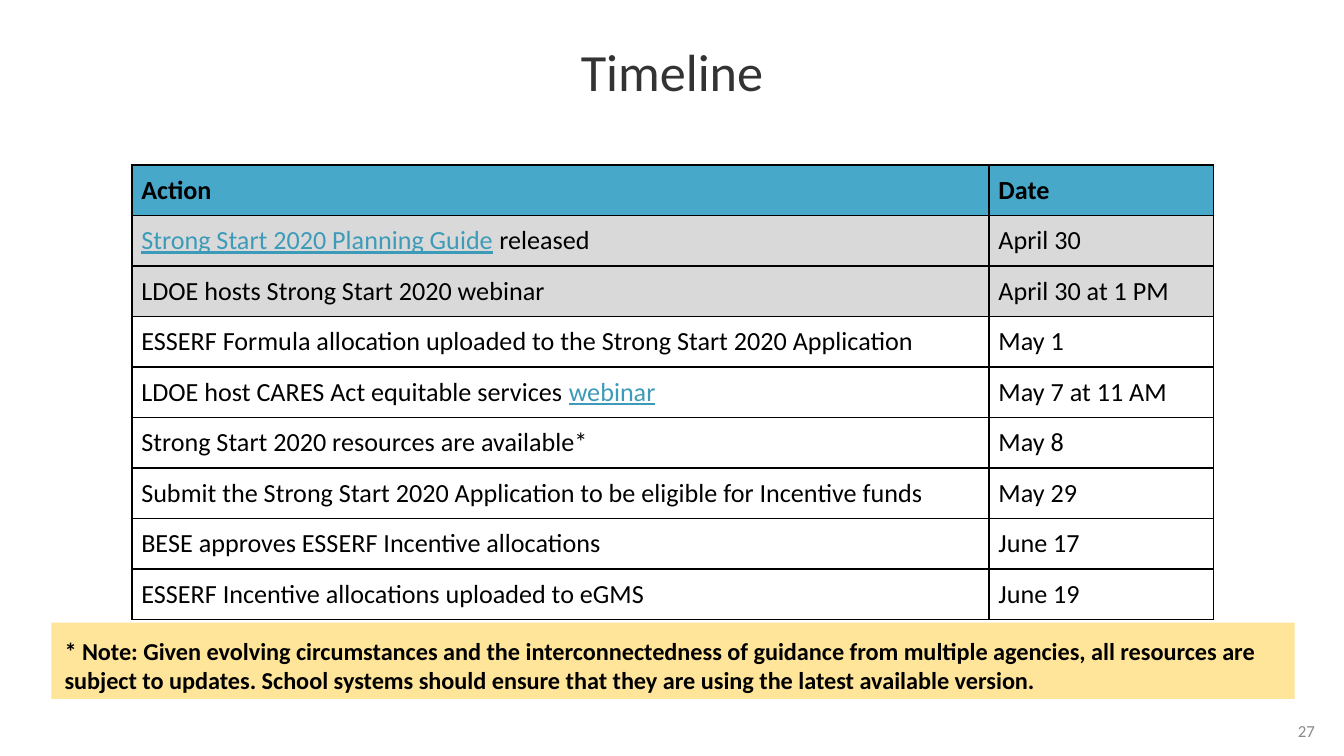
from lxml import etree
from pptx import Presentation
from pptx.dml.color import RGBColor
from pptx.enum.shapes import MSO_SHAPE
from pptx.enum.text import MSO_ANCHOR, PP_ALIGN
from pptx.oxml.ns import qn
from pptx.util import Cm, Pt

RECTANGLE = MSO_SHAPE.RECTANGLE
TOP, MIDDLE = MSO_ANCHOR.TOP, MSO_ANCHOR.MIDDLE
LEFT, CENTER, RIGHT = PP_ALIGN.LEFT, PP_ALIGN.CENTER, PP_ALIGN.RIGHT

COLORS = {
    "title": "333333",
    "text": "000000",
    "link": "3D9BBA",
    "number": "8A8A8A",
    "header": "47A8CA",
    "done": "D9D9D9",
    "note": "FFE599",
    "border": "000000",
}
FONT = "Calibri"
TITLE_ONLY = 5
COLUMN_WIDTHS = (16.2, 4.24)
ROW_HEIGHT = 0.95
DONE_ROWS = 2
BORDER_SIDES = ("a:lnL", "a:lnR", "a:lnT", "a:lnB")

# Each action is a list of (text, is_link) spans.
TIMELINE = [
    ([("Strong Start 2020 Planning Guide", True), (" released", False)], "April 30"),
    ([("LDOE hosts Strong Start 2020 webinar", False)], "April 30 at 1 PM"),
    ([("ESSERF Formula allocation uploaded to the Strong Start 2020 Application", False)], "May 1"),
    ([("LDOE host CARES Act equitable services ", False), ("webinar", True)], "May 7 at 11 AM"),
    ([("Strong Start 2020 resources are available*", False)], "May 8"),
    ([("Submit the Strong Start 2020 Application to be eligible for Incentive funds", False)], "May 29"),
    ([("BESE approves ESSERF Incentive allocations", False)], "June 17"),
    ([("ESSERF Incentive allocations uploaded to eGMS", False)], "June 19"),
]
NOTE = (
    "* Note: Given evolving circumstances and the interconnectedness of guidance "
    "from multiple agencies, all resources are subject to updates. School systems "
    "should ensure that they are using the latest available version."
)


def set_attributes(target, values):
    for name, value in values.items():
        setattr(target, name, value)


def set_margins(target, margin):
    for side in ("left", "right", "top", "bottom"):
        setattr(target, f"margin_{side}", Cm(margin))


def add_span(para, text, color, **font_values):
    span = para.add_run()
    span.text = text
    set_attributes(span.font, {"name": FONT, **font_values})
    span.font.color.rgb = RGBColor.from_string(COLORS[color])


def write_text(shape, text, color, align, anchor, **font_values):
    frame = shape.text_frame
    set_attributes(frame, {"word_wrap": True, "vertical_anchor": anchor})
    set_margins(frame, 0.25)
    para = frame.paragraphs[0]
    para.alignment = align
    add_span(para, text, color, **font_values)
    return para


def add_title(slide):
    title = slide.shapes.title
    set_attributes(title, {"left": Cm(0), "top": Cm(-0.05), "width": Cm(25.4), "height": Cm(2.92)})
    para = write_text(title, "Timeline", "title", CENTER, MIDDLE, size=Pt(28))
    para.line_spacing = 0.9


def add_borders(cell):
    properties = cell._tc.get_or_add_tcPr()
    for position, side in enumerate(BORDER_SIDES):
        line = etree.Element(qn(side), w=str(Pt(1)))
        fill = etree.SubElement(line, qn("a:solidFill"))
        etree.SubElement(fill, qn("a:srgbClr"), val=COLORS["border"])
        properties.insert(position, line)


def fill_cell(cell, spans, fill, anchor, bold):
    set_margins(cell, 0.18)
    cell.vertical_anchor = anchor
    if fill:
        cell.fill.solid()
        cell.fill.fore_color.rgb = RGBColor.from_string(COLORS[fill])
    else:
        cell.fill.background()
    add_borders(cell)
    para = cell.text_frame.paragraphs[0]
    for text, is_link in spans:
        color = "link" if is_link else "text"
        add_span(para, text, color, size=Pt(14), bold=bold, underline=is_link)


def add_timeline(slide):
    rows = [([("Action", False)], "Date")] + TIMELINE
    table = slide.shapes.add_table(
        len(rows), len(COLUMN_WIDTHS), Cm(2.49), Cm(3.12),
        Cm(sum(COLUMN_WIDTHS)), Cm(ROW_HEIGHT * len(rows)),
    ).table
    for column, width in zip(table.columns, COLUMN_WIDTHS):
        column.width = Cm(width)
    for index, (action, date) in enumerate(rows):
        is_header = index == 0
        fill = "header" if is_header else "done" if index <= DONE_ROWS else None
        date_anchor = TOP if is_header else MIDDLE
        table.rows[index].height = Cm(ROW_HEIGHT)
        fill_cell(table.cell(index, 0), action, fill, TOP, is_header)
        fill_cell(table.cell(index, 1), [(date, False)], fill, date_anchor, is_header)


def add_note(slide):
    box = slide.shapes.add_shape(RECTANGLE, Cm(0.97), Cm(11.77), Cm(23.5), Cm(1.44))
    box.shadow.inherit = False
    box.fill.solid()
    box.fill.fore_color.rgb = RGBColor.from_string(COLORS["note"])
    box.line.fill.background()
    write_text(box, NOTE, "text", LEFT, TOP, size=Pt(13), bold=True)


def add_page_number(slide):
    box = slide.shapes.add_textbox(Cm(18.9), Cm(13.34), Cm(6.2), Cm(0.96))
    write_text(box, "27", "number", RIGHT, MIDDLE, size=Pt(9))


def main():
    deck = Presentation()
    set_attributes(deck, {"slide_width": Cm(25.4), "slide_height": Cm(14.29)})
    slide = deck.slides.add_slide(deck.slide_layouts[TITLE_ONLY])
    add_page_number(slide)
    add_title(slide)
    add_timeline(slide)
    add_note(slide)
    deck.save("out.pptx")


if __name__ == "__main__":
    main()
